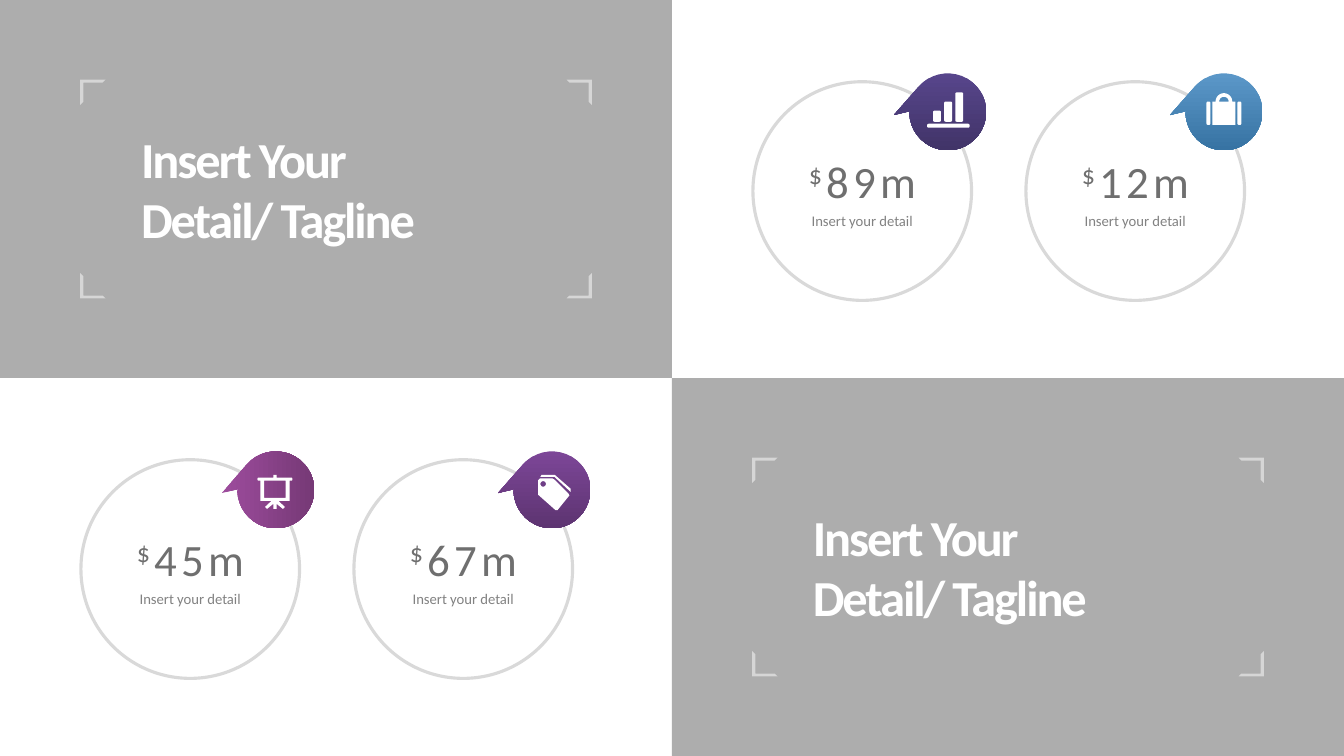
from math import cos, radians, sin

from lxml import etree
from pptx import Presentation
from pptx.dml.color import RGBColor
from pptx.enum.shapes import MSO_SHAPE
from pptx.enum.text import MSO_ANCHOR, MSO_AUTO_SIZE, PP_ALIGN
from pptx.oxml.ns import qn
from pptx.util import Cm, Pt

RECT, OVAL, HALF_FRAME = MSO_SHAPE.RECTANGLE, MSO_SHAPE.OVAL, MSO_SHAPE.HALF_FRAME
LEFT, CENTER = PP_ALIGN.LEFT, PP_ALIGN.CENTER
TOP, NO_AUTOFIT = MSO_ANCHOR.TOP, MSO_AUTO_SIZE.NONE

WHITE = RGBColor(0xFF, 0xFF, 0xFF)
PANEL_GRAY = RGBColor(0x5C, 0x5C, 0x5C)
RING_GRAY = RGBColor(0xD9, 0xD9, 0xD9)
VALUE_GRAY = RGBColor(0x6F, 0x6F, 0x6F)
DETAIL_GRAY = RGBColor(0x82, 0x82, 0x82)
MAGENTA = RGBColor(0x9D, 0x4C, 0x9D), RGBColor(0x76, 0x39, 0x76)
VIOLET = RGBColor(0x7C, 0x46, 0x97), RGBColor(0x5D, 0x34, 0x71)
INDIGO = RGBColor(0x57, 0x45, 0x8B), RGBColor(0x41, 0x34, 0x68)
BLUE = RGBColor(0x5B, 0x97, 0xC8), RGBColor(0x37, 0x73, 0xA3)

SLIDE_W, SLIDE_H = 33.87, 19.05
PANEL_W, PANEL_H = SLIDE_W / 2, SLIDE_H / 2
RING = 5.51
RING_PITCH, PIN_PITCH = 6.88, 6.96


def arc(cx, cy, radius, start, end, steps=36):
    angles = [radians(start + (end - start) * i / steps) for i in range(steps + 1)]
    return [(cx + radius * cos(a), cy + radius * sin(a)) for a in angles]


def box(left, top, right, bottom, radius=0):
    if not radius:
        return [(left, top), (right, top), (right, bottom), (left, bottom)]
    corners = [(left, top, 180), (right, top, 270), (right, bottom, 0), (left, bottom, 90)]
    points = []
    for x, y, angle in corners:
        cx = x + radius if x == left else x - radius
        cy = y + radius if y == top else y - radius
        points += arc(cx, cy, radius, angle, angle + 90, 6)
    return points


def chart_icon():
    bars = [box(-0.37 + 0.28 * i, -0.03 - 0.23 * i, -0.17 + 0.28 * i, 0.25, 0.04)
            for i in range(3)]
    return bars + [box(-0.52, 0.3, 0.55, 0.4, 0.04)]


def suitcase_icon():
    body = [(-0.29, 0.33), (-0.29, -0.26), *arc(0, -0.26, 0.21, 180, 360),
            (0.29, -0.26), (0.29, 0.33)]
    return [body, arc(0, -0.26, 0.12, 180, 360),
            box(-0.44, -0.26, -0.34, 0.33, 0.04), box(0.34, -0.26, 0.44, 0.33, 0.04)]


def board_icon():
    leg = [(-0.11, 0.28), (-0.27, 0.43), (-0.22, 0.48), (-0.06, 0.35), (-0.06, 0.28)]
    mirrored_leg = [(-0.04 - x, y) for x, y in leg]
    return [box(-0.46, -0.31, 0.42, -0.23, 0.03), box(-0.06, -0.38, 0.02, -0.31),
            box(-0.39, -0.23, 0.35, 0.28), box(-0.29, -0.23, 0.25, 0.2),
            box(-0.06, 0.28, 0.02, 0.48), leg, mirrored_leg]


def tag_icon():
    back = [(0.47, 0.05), (0.06, -0.33), (-0.29, -0.33), (-0.26, -0.38),
            (0.07, -0.38), (0.47, -0.03)]
    front = [(-0.35, -0.24), (-0.3, -0.29), (0.01, -0.29), (0.06, -0.26), (0.42, 0.1),
             (0.44, 0.14), (0.14, 0.51), (0.09, 0.51), (-0.35, 0.12)]
    return [back, front, arc(-0.22, -0.15, 0.07, 0, 360)]


def write(p, text, size=12, color=WHITE, bold=False, align=LEFT, spacing=0, baseline=0):
    p.alignment = align
    r = p.add_run()
    r.text = text
    r.font.name = "Calibri"
    r.font.size = Pt(size)
    r.font.bold = bold
    r.font.color.rgb = color
    r.font._element.set("spc", str(spacing))
    r.font._element.set("baseline", str(baseline))


def add_textbox(s, x, y, w, h):
    sp = s.shapes.add_textbox(Cm(x), Cm(y), Cm(w), Cm(h))
    sp.text_frame.word_wrap = True
    return sp


def add_shape(s, kind, x, y, w, h, fill=None, alpha=None):
    sp = s.shapes.add_shape(kind, Cm(x), Cm(y), Cm(w), Cm(h))
    sp.shadow.inherit = False
    sp.line.fill.background()
    if fill is None:
        sp.fill.background()
    else:
        sp.fill.solid()
        sp.fill.fore_color.rgb = fill
    if alpha:
        color = sp._element.spPr.find(".//" + qn("a:srgbClr"))
        etree.SubElement(color, qn("a:alpha")).set("val", str(alpha * 1000))
    return sp


def add_outline(s, cx, cy, contours):
    contours = [[(Cm(cx + x), Cm(cy + y)) for x, y in c] for c in contours]
    builder = s.shapes.build_freeform(*contours[0][0])
    for i, points in enumerate(contours):
        if i:
            builder.move_to(*points[0])
        builder.add_line_segments(points[1:], close=True)
    sp = builder.convert_to_shape()
    sp.shadow.inherit = False
    sp.line.fill.background()
    return sp


def add_pin(s, cx, cy, colors, angle, icon):
    pin = add_outline(s, cx, cy, [[(-1.36, 0.08), (-0.94, -0.02), *arc(0, 0, 0.97, 178, -139)]])
    pin.fill.gradient()
    pin.fill.gradient_angle = angle
    for stop, color in zip(pin.fill.gradient_stops, colors):
        stop.color.rgb = color
    symbol = add_outline(s, cx, cy, icon)
    symbol.fill.solid()
    symbol.fill.fore_color.rgb = WHITE


def add_ring(s, x, y, value):
    ring = add_shape(s, OVAL, x, y, RING, RING)
    ring.line.color.rgb = RING_GRAY
    ring.line.width = Pt(2.25)
    p = add_textbox(s, x + 0.64, y + 1.68, 4.24, 1.63).text_frame.paragraphs[0]
    for text, baseline in (("$", 30000), (value, 0)):
        write(p, text, size=32, color=VALUE_GRAY, align=CENTER, spacing=300, baseline=baseline)
    p = add_textbox(s, x + 0.76, y + 3.15, 3.99, 0.71).text_frame.paragraphs[0]
    write(p, "Insert your detail", size=10.5, color=DETAIL_GRAY, align=CENTER)


def add_metrics_panel(s, x, y, metrics):
    for i, (value, colors, angle, icon) in enumerate(metrics):
        add_ring(s, x + 2.04 + RING_PITCH * i, y + 2.06, value)
        add_pin(s, x + 6.95 + PIN_PITCH * i, y + 2.82, colors, angle, icon)


def add_tagline_panel(s, x, y, title=None):
    add_shape(s, RECT, x, y, PANEL_W, PANEL_H, PANEL_GRAY, 50)
    for dx, flip_h in ((2.02, "0"), (14.28, "1")):
        for dy, flip_v in ((2.01, "0"), (6.88, "1")):
            corner = add_shape(s, HALF_FRAME, x + dx, y + dy, 0.64, 0.64, WHITE, 50)
            corner.adjustments[0], corner.adjustments[1] = 0.112, 0.132
            xfrm = corner._element.spPr.find(qn("a:xfrm"))
            xfrm.set("flipH", flip_h)
            xfrm.set("flipV", flip_v)
    place = x + 3.3, y + 3.1, 10.34, 3.33
    if title is None:
        title = add_textbox(s, *place)
    else:
        title.left, title.top, title.width, title.height = map(Cm, place)
        s.shapes._spTree.append(title._element)
    tf = title.text_frame
    tf.auto_size = NO_AUTOFIT
    tf.vertical_anchor = TOP
    write(tf.paragraphs[0], "Insert Your", size=36, bold=True, spacing=-150)
    write(tf.add_paragraph(), "Detail/ Tagline", size=36, bold=True, spacing=-150)


def main():
    prs = Presentation()
    prs.slide_width, prs.slide_height = Cm(SLIDE_W), Cm(SLIDE_H)
    s = prs.slides.add_slide(prs.slide_layouts[5])
    add_tagline_panel(s, 0, 0, s.shapes.title)
    add_metrics_panel(s, PANEL_W, 0, [("89m", INDIGO, 270, chart_icon()),
                                      ("12m", BLUE, 270, suitcase_icon())])
    add_metrics_panel(s, 0, PANEL_H, [("45m", MAGENTA, 0, board_icon()),
                                      ("67m", VIOLET, 270, tag_icon())])
    add_tagline_panel(s, PANEL_W, PANEL_H)
    prs.save("out.pptx")


if __name__ == "__main__":
    main()
